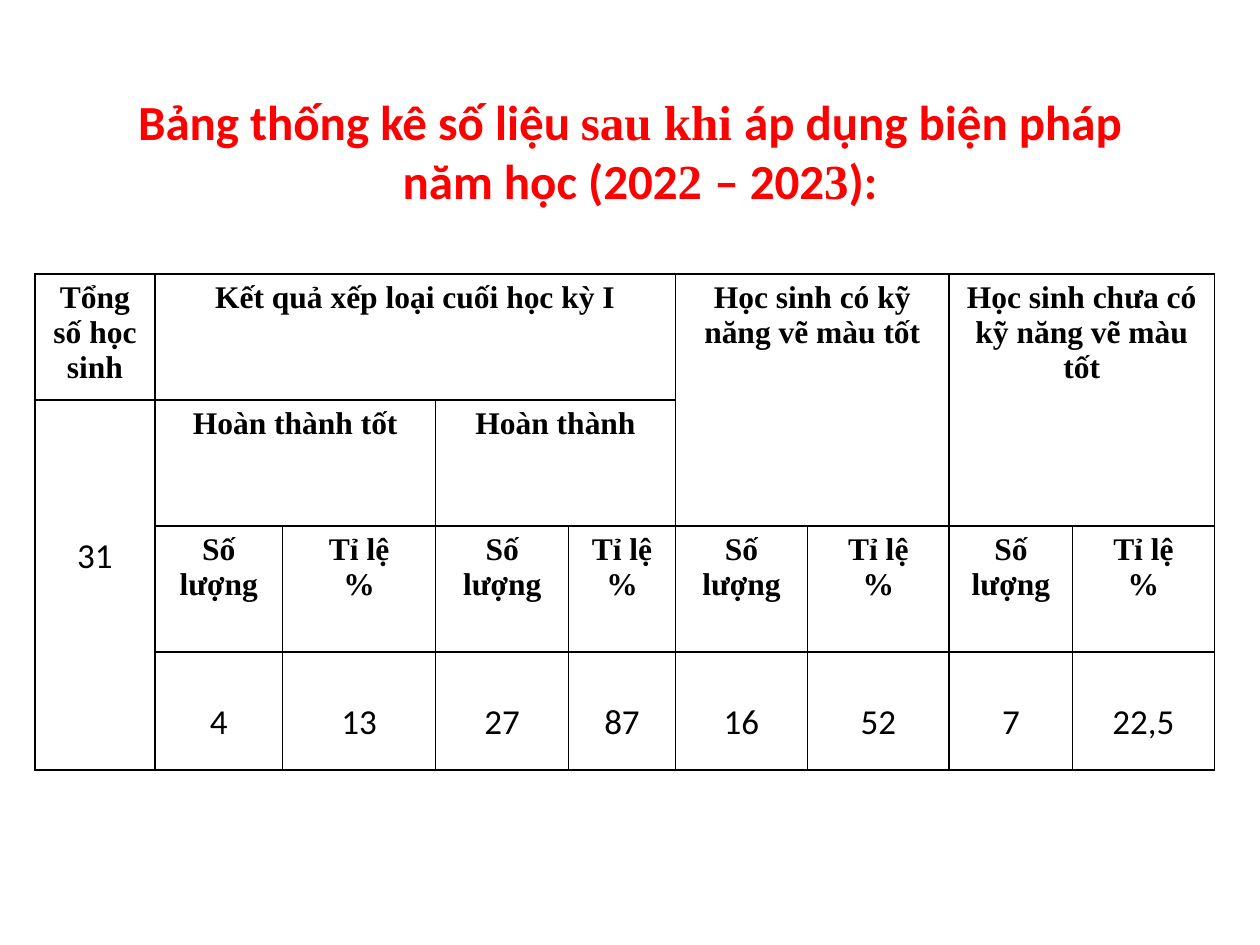
from pptx import Presentation
from pptx.dml.color import RGBColor
from pptx.enum import text
from pptx.oxml import parse_xml
from pptx.oxml import ns
from pptx.util import Pt

SERIF, SANS = "Times New Roman", "Calibri"
BLACK, WHITE, RED = "000000", "FFFFFF", "FF0000"
EDGES = ("lnL", "lnR", "lnT", "lnB")


def rgb(hex_string):
    return RGBColor.from_string(hex_string)


class Page:
    """Style and current slide, with one method for each kind of element."""

    header = dict(size=18, name=SERIF, bold=True, color=BLACK)
    value = dict(size=20, name=SANS, bold=False, color=BLACK)
    heading = dict(size=28, name=SANS, bold=True, color=RED)

    def __init__(self, slide):
        self.slide = slide

    def font(self, font, size, name, bold, color):
        font.size, font.name, font.bold = Pt(size), name, bold
        font.color.rgb = rgb(color)

    def title(self, left, top, width, height, lines, second_indent):
        """Write lines of (wording, font name) runs, shifting the second line."""
        box = self.slide.shapes.add_textbox(Pt(left), Pt(top), Pt(width), Pt(height))
        frame = box.text_frame
        frame.word_wrap = True
        for index, line in enumerate(lines):
            paragraph = frame.add_paragraph() if index else frame.paragraphs[0]
            paragraph.alignment = text.PP_ALIGN.CENTER
            if index:
                paragraph._p.get_or_add_pPr().set("marL", str(Pt(second_indent)))
            for wording, name in line:
                run = paragraph.add_run()
                run.text = wording
                self.font(run.font, **{**self.heading, "name": name})

    def table(self, left, top, widths, heights):
        table = self.slide.shapes.add_table(
            len(heights), len(widths), Pt(left), Pt(top),
            Pt(sum(widths)), Pt(sum(heights))).table
        table.first_row = table.horz_banding = False
        for column, width in zip(table.columns, widths):
            column.width = Pt(width)
        for row, height in zip(table.rows, heights):
            row.height = Pt(height)
        for cell in table.iter_cells():
            self.border(cell)
            cell.fill.solid()
            cell.fill.fore_color.rgb = rgb(WHITE)
        return table

    def border(self, cell):
        properties = cell._tc.get_or_add_tcPr()
        for edge in EDGES:
            properties.append(parse_xml(
                f'<a:{edge} {ns.nsdecls("a")} w="{Pt(1)}"><a:solidFill>'
                f'<a:srgbClr val="{BLACK}"/></a:solidFill></a:{edge}>'))

    def cell(self, table, row, column, wording, style, span=(1, 1), top=3.6):
        cell = table.cell(row, column)
        if span != (1, 1):
            cell.merge(table.cell(row + span[0] - 1, column + span[1] - 1))
        cell.margin_top = Pt(top)
        cell.text = wording
        for paragraph in cell.text_frame.paragraphs:
            paragraph.alignment = text.PP_ALIGN.CENTER
            self.font(paragraph.font, **style)


def main():
    deck = Presentation()
    deck.slide_width, deck.slide_height = Pt(720), Pt(540)
    page = Page(deck.slides.add_slide(deck.slide_layouts[6]))

    page.title(0, 49, 720, 75, [
        [("Bảng thống kê số liệu ", SANS), ("sau khi ", SERIF),
         ("áp dụng biện pháp", SANS)],
        [("năm học (202", SANS), ("2 ", SERIF), ("– 202", SANS),
         ("3", SERIF), ("):", SANS)],
    ], second_indent=11.5)

    results = page.table(
        20, 156.5, [68.5, 73, 87.5, 76, 61, 75.5, 81, 70.5, 81], [72, 72, 72, 67.5])
    groups = [
        (0, 0, "Tổng số học sinh", (1, 1)),
        (0, 1, "Kết quả xếp loại cuối học kỳ I", (1, 4)),
        (0, 5, "Học sinh có kỹ năng vẽ màu tốt", (2, 2)),
        (0, 7, "Học sinh chưa có kỹ năng vẽ màu tốt", (2, 2)),
        (1, 1, "Hoàn thành tốt", (1, 2)),
        (1, 3, "Hoàn thành", (1, 2)),
    ]
    for row, column, wording, span in groups:
        page.cell(results, row, column, wording, page.header, span)

    page.cell(results, 1, 0, "31", page.value, span=(3, 1), top=77)
    figures = ["4", "13", "27", "87", "16", "52", "7", "22,5"]
    for column, figure in enumerate(figures, start=1):
        measure = "Số lượng" if column % 2 else "Tỉ lệ\n%"
        page.cell(results, 2, column, measure, page.header)
        page.cell(results, 3, column, figure, page.value, top=28)

    deck.save("out.pptx")


if __name__ == "__main__":
    main()
